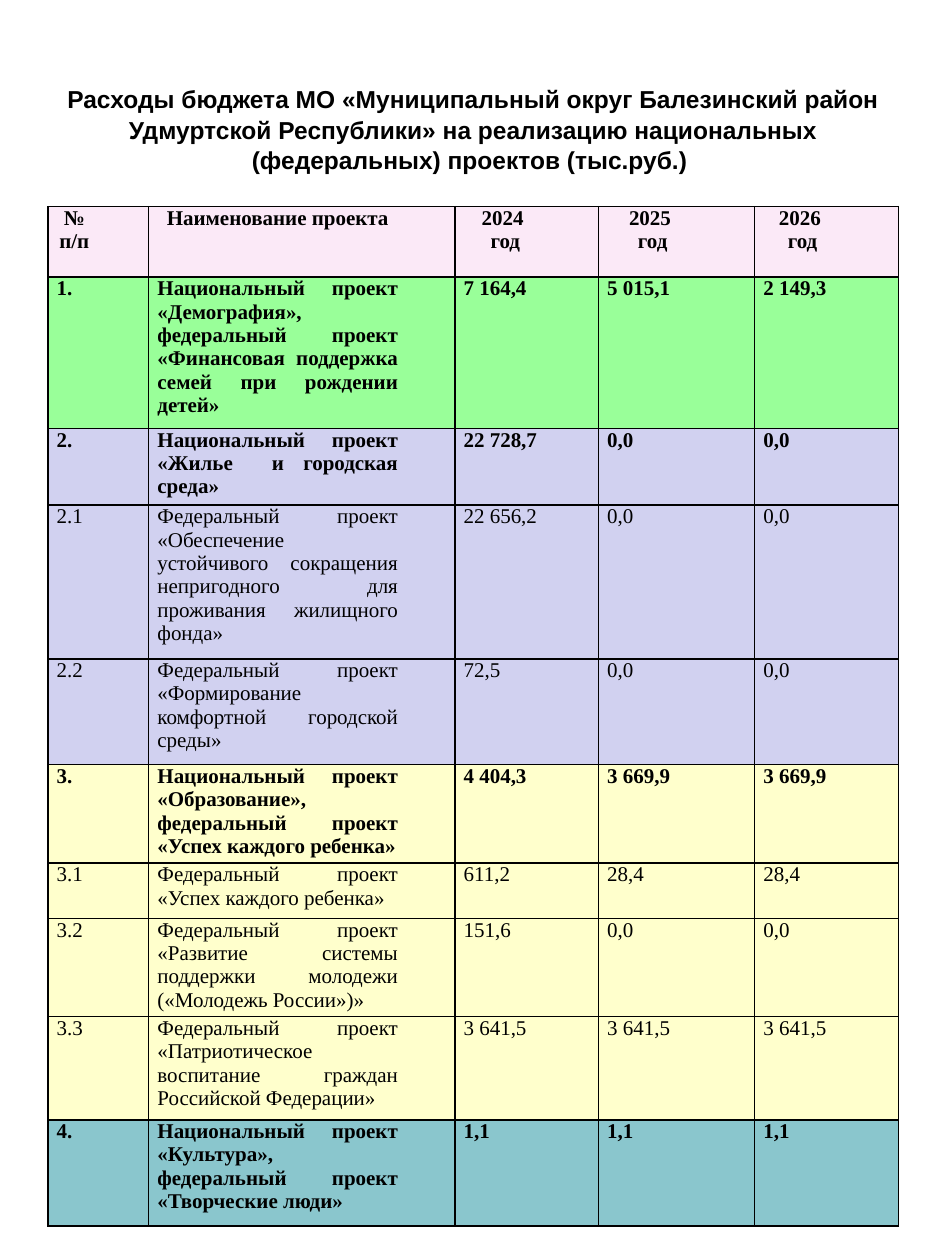
from pptx import Presentation
from pptx.dml.color import RGBColor
from pptx.enum.text import MSO_ANCHOR, MSO_AUTO_SIZE, PP_ALIGN
from pptx.oxml import parse_xml
from pptx.oxml.ns import nsdecls
from pptx.util import Inches, Pt

TITLE = ("Расходы бюджета МО «Муниципальный округ Балезинский район "
         "Удмуртской Республики» на реализацию национальных "
         "(федеральных) проектов (тыс.руб.) ")
PINK, GREEN, LILAC, CREAM, TEAL = "FBE9F7", "99FF99", "D1D1F0", "FFFFCC", "8AC6CD"
INK = "000000"
COLS = [0.8, 2.43, 1.14, 1.24, 1.14]
ROWS = [
    (0.56, PINK, ["№\nп/п", "Наименование проекта", "2024\n год", "2025 \nгод", "2026 \nгод"]),
    (1.2, GREEN, ["1.", "Национальный проект «Демография», федеральный проект "
                  "«Финансовая поддержка семей при рождении детей»",
                  "7 164,4", "5 015,1", "2 149,3"]),
    (0.61, LILAC, ["2.", "Национальный проект «Жилье  и городская среда»",
                   "22 728,7", "0,0", "0,0"]),
    (1.22, LILAC, ["2.1", "Федеральный проект «Обеспечение устойчивого сокращения "
                   "непригодного для проживания жилищного фонда»",
                   "22 656,2", "0,0", "0,0"]),
    (0.84, LILAC, ["2.2", "Федеральный проект «Формирование комфортной городской среды»",
                   "72,5", "0,0", "0,0"]),
    (0.78, CREAM, ["3.", "Национальный проект «Образование», федеральный проект "
                   "«Успех каждого ребенка»", "4 404,3", "3 669,9", "3 669,9"]),
    (0.44, CREAM, ["3.1", "Федеральный проект «Успех каждого ребенка»",
                   "611,2", "28,4", "28,4"]),
    (0.78, CREAM, ["3.2", "Федеральный проект «Развитие системы поддержки молодежи "
                   "(«Молодежь России»)»", "151,6", "0,0", "0,0"]),
    (0.82, CREAM, ["3.3", "Федеральный проект «Патриотическое воспитание граждан "
                   "Российской Федерации»", "3 641,5", "3 641,5", "3 641,5"]),
    (0.84, TEAL, ["4.", "Национальный проект «Культура», федеральный проект "
                  "«Творческие люди»", "1,1", "1,1", "1,1"]),
]
LEFT, TOP, WIDE = 0.38, 1.64, sum(COLS)
HEAD = 0.4
PAD, INDENT = Inches(0.07), Inches(0.38)


def tint(code):
    return RGBColor.from_string(code)


def style(par, face, size, bold, align):
    par.alignment = align
    font = par.font
    font.name, font.size, font.bold = face, Pt(size), bold
    font.color.rgb = tint(INK)


def frame(cell):
    props = cell._tc.get_or_add_tcPr()
    for spot, side in enumerate(("lnL", "lnR", "lnT", "lnB")):
        props.insert(spot, parse_xml(
            f'<a:{side} {nsdecls("a")} w="{Pt(1)}"><a:solidFill>'
            f'<a:srgbClr val="{INK}"/></a:solidFill></a:{side}>'))


def fill(cell, text, color, bold, align):
    cell.margin_left = cell.margin_right = PAD
    cell.margin_top = cell.margin_bottom = 0
    cell.fill.solid()
    cell.fill.fore_color.rgb = tint(color)
    cell.text = text
    for par in cell.text_frame.paragraphs:
        style(par, "Times New Roman", 12, bold, align)
        par._p.get_or_add_pPr().set("marR", str(INDENT))
    frame(cell)


def main():
    deck = Presentation()
    deck.slide_width, deck.slide_height = Inches(7.5), Inches(10)
    slide = deck.slides.add_slide(deck.slide_layouts[5])

    title = slide.shapes.title
    title.left, title.top = Inches(LEFT), Inches(HEAD)
    title.width, title.height = Inches(WIDE), Inches(TOP - HEAD)
    box = title.text_frame
    box.text = TITLE
    box.word_wrap = True
    box.auto_size = MSO_AUTO_SIZE.NONE
    box.vertical_anchor = MSO_ANCHOR.MIDDLE
    style(box.paragraphs[0], "Arial", 14, True, PP_ALIGN.CENTER)
    box.paragraphs[0].line_spacing = 1.05

    tall = sum(row[0] for row in ROWS)
    table = slide.shapes.add_table(len(ROWS), len(COLS), Inches(LEFT), Inches(TOP),
                                   Inches(WIDE), Inches(tall)).table
    table.first_row = table.horz_banding = False
    for col, width in zip(table.columns, COLS):
        col.width = Inches(width)
    for r, (height, color, texts) in enumerate(ROWS):
        table.rows[r].height = Inches(height)
        bold = r == 0 or texts[0].endswith(".")
        align = PP_ALIGN.JUSTIFY if r else PP_ALIGN.CENTER
        for c, text in enumerate(texts):
            fill(table.cell(r, c), text, color, bold, align)

    deck.save("out.pptx")


if __name__ == "__main__":
    main()
